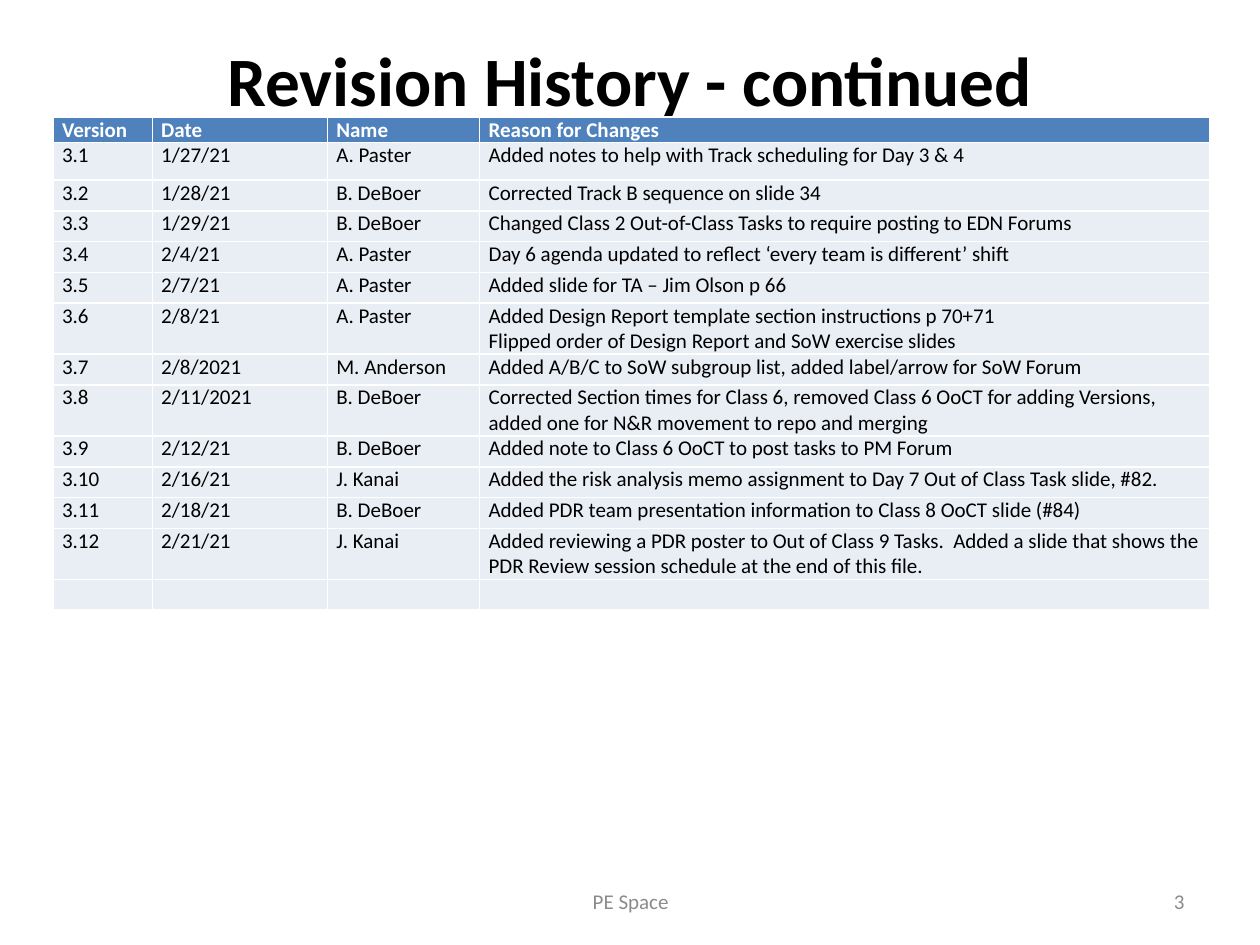
from typing import NamedTuple

from lxml.etree import SubElement
from pptx import Presentation
from pptx.dml.color import RGBColor
from pptx.enum.text import MSO_ANCHOR, PP_ALIGN
from pptx.oxml.ns import qn
from pptx.util import Cm, Pt

FONT = "Calibri"
BLACK, WHITE, GREY = "000000", "FFFFFF", "8C8C8C"
HEADER_BLUE, ROW_BLUE = "4F81BD", "E9EDF4"
COLUMN_WIDTHS = (2.0, 3.53, 3.07, 14.71)
HEADER_HEIGHT, FIRST_HEIGHT, ROW_HEIGHT, TWO_LINE_HEIGHT = 0.51, 0.76, 0.62, 1.03
CELL_FORMAT = {
    "margin_left": Cm(0.18),
    "margin_right": Cm(0.18),
    "margin_top": 0,
    "margin_bottom": 0,
    "vertical_anchor": MSO_ANCHOR.TOP,
}


class Revision(NamedTuple):
    version: str
    date: str
    name: str
    reason: str
    height: float = ROW_HEIGHT


class Label(NamedTuple):
    text: str
    left: float
    top: float
    width: float
    height: float
    align: PP_ALIGN
    anchor: MSO_ANCHOR
    size: float
    color: str
    bold: bool = False
    inset: float = 0.25


REVISIONS = (
    Revision("Version", "Date", "Name", "Reason for Changes", HEADER_HEIGHT),
    Revision("3.1", "1/27/21", "A. Paster", "Added notes to help with Track scheduling for Day 3 & 4", FIRST_HEIGHT),
    Revision("3.2", "1/28/21", "B. DeBoer", "Corrected Track B sequence on slide 34"),
    Revision("3.3", "1/29/21", "B. DeBoer", "Changed Class 2 Out-of-Class Tasks to require posting to EDN Forums"),
    Revision("3.4", "2/4/21", "A. Paster", "Day 6 agenda updated to reflect ‘every team is different’ shift"),
    Revision("3.5", "2/7/21", "A. Paster", "Added slide for TA – Jim Olson p 66"),
    Revision("3.6", "2/8/21", "A. Paster",
             "Added Design Report template section instructions p 70+71\n"
             "Flipped order of Design Report and SoW exercise slides", TWO_LINE_HEIGHT),
    Revision("3.7", "2/8/2021", "M. Anderson", "Added A/B/C to SoW subgroup list, added label/arrow for SoW Forum"),
    Revision("3.8", "2/11/2021", "B. DeBoer",
             "Corrected Section times for Class 6, removed Class 6 OoCT for adding Versions, "
             "added one for N&R movement to repo and merging", TWO_LINE_HEIGHT),
    Revision("3.9", "2/12/21", "B. DeBoer", "Added note to Class 6 OoCT to post tasks to PM Forum"),
    Revision("3.10", "2/16/21", "J. Kanai",
             "Added the risk analysis memo assignment to Day 7 Out of Class Task slide, #82."),
    Revision("3.11", "2/18/21", "B. DeBoer", "Added PDR team presentation information to Class 8 OoCT slide (#84)"),
    Revision("3.12", "2/21/21", "J. Kanai",
             "Added reviewing a PDR poster to Out of Class 9 Tasks.  Added a slide that shows "
             "the PDR Review session schedule at the end of this file.", TWO_LINE_HEIGHT),
    Revision("", "", "", ""),
)

TITLE = Label("Revision History - continued", 1.27, 0.76, 22.86, 1.6,
              PP_ALIGN.CENTER, MSO_ANCHOR.TOP, 39.6, BLACK, True, 0)
FOOTERS = (
    Label("PE Space", 8.69, 17.65, 8.05, 1.02, PP_ALIGN.CENTER, MSO_ANCHOR.MIDDLE, 12, GREY),
    Label("3", 18.21, 17.65, 5.92, 1.02, PP_ALIGN.RIGHT, MSO_ANCHOR.MIDDLE, 12, GREY),
)


def rgb(color: str) -> RGBColor:
    return RGBColor.from_string(color)


def apply_format(target, values: dict) -> None:
    for attribute, value in values.items():
        setattr(target, attribute, value)


def style_text(frame, size: float, color: str, bold: bool, align: PP_ALIGN) -> None:
    for paragraph in frame.paragraphs:
        paragraph.alignment = align
        for run in paragraph.runs:
            apply_format(run.font, {"name": FONT, "size": Pt(size), "bold": bold})
            run.font.color.rgb = rgb(color)
        if not paragraph.runs:
            SubElement(paragraph._p, qn("a:endParaRPr"), sz=str(int(size * 100)))


def draw_label(slide, label: Label) -> None:
    box = slide.shapes.add_textbox(Cm(label.left), Cm(label.top), Cm(label.width), Cm(label.height))
    frame = box.text_frame
    apply_format(frame, {
        "word_wrap": True,
        "vertical_anchor": label.anchor,
        "margin_left": Cm(label.inset),
        "margin_right": Cm(label.inset),
        "margin_top": 0,
        "margin_bottom": 0,
        "text": label.text,
    })
    style_text(frame, label.size, label.color, label.bold, label.align)


def draw_history(slide, revisions: tuple[Revision, ...]) -> None:
    total_height = sum(revision.height for revision in revisions)
    history = slide.shapes.add_table(
        len(revisions), len(COLUMN_WIDTHS),
        Cm(1.07), Cm(2.36), Cm(sum(COLUMN_WIDTHS)), Cm(total_height),
    ).table
    history.horz_banding = False
    for column, width in zip(history.columns, COLUMN_WIDTHS):
        column.width = Cm(width)
    for index, (row, revision) in enumerate(zip(history.rows, revisions)):
        row.height = Cm(revision.height)
        is_header = index == 0
        for cell, entry in zip(row.cells, revision[:len(COLUMN_WIDTHS)]):
            apply_format(cell, {**CELL_FORMAT, "text": entry})
            cell.fill.solid()
            cell.fill.fore_color.rgb = rgb(HEADER_BLUE if is_header else ROW_BLUE)
            style_text(cell.text_frame, 12, WHITE if is_header else BLACK, is_header, PP_ALIGN.LEFT)


def main() -> None:
    """Build the revision history slide and save it."""
    presentation = Presentation()
    apply_format(presentation, {"slide_width": Cm(25.4), "slide_height": Cm(19.05)})
    slide = presentation.slides.add_slide(presentation.slide_layouts[6])
    draw_label(slide, TITLE)
    draw_history(slide, REVISIONS)
    for footer in FOOTERS:
        draw_label(slide, footer)
    presentation.save("out.pptx")


if __name__ == "__main__":
    main()
